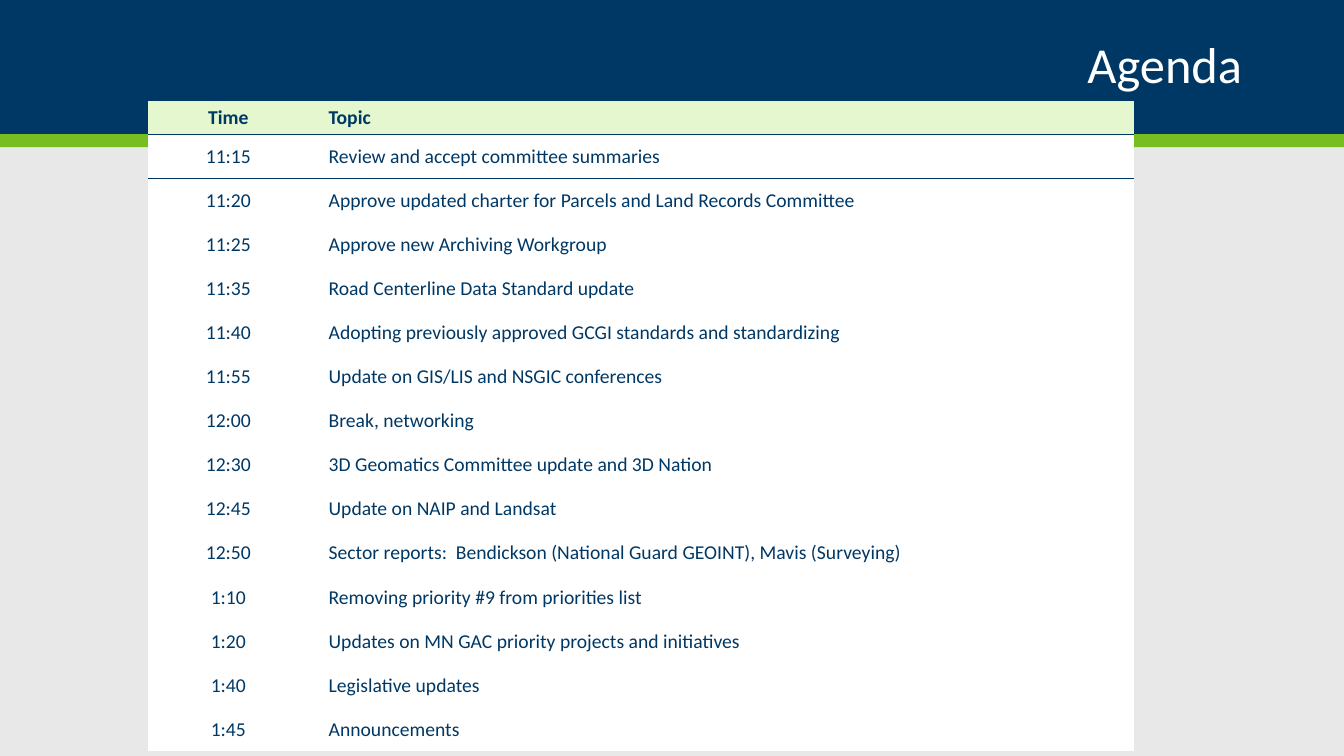
from pptx import Presentation
from pptx.dml.color import RGBColor
from pptx.enum.shapes import MSO_SHAPE
from pptx.enum.text import MSO_ANCHOR, PP_ALIGN
from pptx.oxml import parse_xml
from pptx.oxml.ns import nsdecls, qn
from pptx.util import Inches, Pt

NAVY = RGBColor(0x00, 0x38, 0x65)
GREEN = RGBColor(0x78, 0xBE, 0x21)
PALE = RGBColor(0xE4, 0xF7, 0xCE)
GRAY = RGBColor(0xE8, 0xE8, 0xE8)
WHITE = RGBColor(0xFF, 0xFF, 0xFF)
FONT = "Calibri"
PLAIN = "{2D5ABB26-0587-4C30-8999-92F81FD0307C}"  # no style, no grid

WIDE, HIGH = 13.33, 7.5
BAND = 1.33
HEAD = 0.33
COLS = (1.59, 8.19)

AGENDA = [
    ("Time", "Topic"),
    ("11:15", "Review and accept committee summaries"),
    ("11:20", "Approve updated charter for Parcels and Land Records Committee"),
    ("11:25", "Approve new Archiving Workgroup"),
    ("11:35", "Road Centerline Data Standard update"),
    ("11:40", "Adopting previously approved GCGI standards and standardizing"),
    ("11:55", "Update on GIS/LIS and NSGIC conferences"),
    ("12:00", "Break, networking"),
    ("12:30", "3D Geomatics Committee update and 3D Nation"),
    ("12:45", "Update on NAIP and Landsat"),
    ("12:50", "Sector reports:  Bendickson (National Guard GEOINT), Mavis (Surveying)"),
    ("1:10", "Removing priority #9 from priorities list"),
    ("1:20", "Updates on MN GAC priority projects and initiatives"),
    ("1:40", "Legislative updates"),
    ("1:45", "Announcements"),
]


def add_bar(slide, top, height, color):
    """Add a full-width bar behind the title."""
    bar = slide.shapes.add_shape(
        MSO_SHAPE.RECTANGLE, 0, Inches(top), Inches(WIDE), Inches(height))
    bar.shadow.inherit = False
    bar.fill.solid()
    bar.fill.fore_color.rgb = color
    bar.line.fill.background()
    slide.shapes.title._element.addprevious(bar._element)


def set_title(slide, text, left, top, width, height):
    title = slide.shapes.title
    title.left, title.top = Inches(left), Inches(top)
    title.width, title.height = Inches(width), Inches(height)
    frame = title.text_frame
    frame.text = text
    frame.vertical_anchor = MSO_ANCHOR.MIDDLE
    para = frame.paragraphs[0]
    para.alignment = PP_ALIGN.RIGHT
    para.line_spacing = 0.9
    para.font.name, para.font.size = FONT, Pt(36)
    para.font.color.rgb = WHITE


def add_rule(cell, side):
    """Draw a navy border on side T or B of the cell."""
    cell._tc.get_or_add_tcPr().insert(0, parse_xml(
        f'<a:ln{side} {nsdecls("a")} w="12700"><a:solidFill>'
        f'<a:srgbClr val="{NAVY}"/></a:solidFill></a:ln{side}>'))


def fill_cell(cell, text, first, head):
    """Write one cell; first marks the time column, head the top row."""
    cell.text = text
    cell.vertical_anchor = MSO_ANCHOR.MIDDLE
    cell.margin_left = Inches(0.1 if first else 0.2)
    cell.margin_right = Inches(0.1)
    cell.margin_top = cell.margin_bottom = Inches(0.05 if head else 0.1)
    cell.fill.solid()
    cell.fill.fore_color.rgb = PALE if head else WHITE
    para = cell.text_frame.paragraphs[0]
    para.alignment = PP_ALIGN.CENTER if first else PP_ALIGN.LEFT
    para.font.name, para.font.size = FONT, Pt(14)
    para.font.bold = head
    para.font.color.rgb = NAVY


def add_agenda(slide, left, top, height):
    frame = slide.shapes.add_table(
        len(AGENDA), len(COLS), Inches(left), Inches(top),
        Inches(sum(COLS)), Inches(height))
    table = frame.table
    table.horz_banding = False
    table._tbl.tblPr.find(qn("a:tableStyleId")).text = PLAIN
    for col, width in zip(table.columns, COLS):
        col.width = Inches(width)
    step = (height - HEAD) / (len(AGENDA) - 1)
    for r, words in enumerate(AGENDA):
        table.rows[r].height = Inches(step if r else HEAD)
        for c, text in enumerate(words):
            cell = table.cell(r, c)
            fill_cell(cell, text, c == 0, r == 0)
            if r < 2:
                add_rule(cell, "T" if r else "B")


def main():
    deck = Presentation()
    deck.slide_width, deck.slide_height = Inches(WIDE), Inches(HIGH)
    slide = deck.slides.add_slide(deck.slide_layouts[5])
    slide.background.fill.solid()
    slide.background.fill.fore_color.rgb = GRAY
    add_bar(slide, 0, BAND, NAVY)
    add_bar(slide, BAND, 0.13, GREEN)
    set_title(slide, "Agenda", 0.92, 0.17, 11.5, 1)
    add_agenda(slide, 1.47, 1, 6.45)
    deck.save("out.pptx")


if __name__ == "__main__":
    main()
